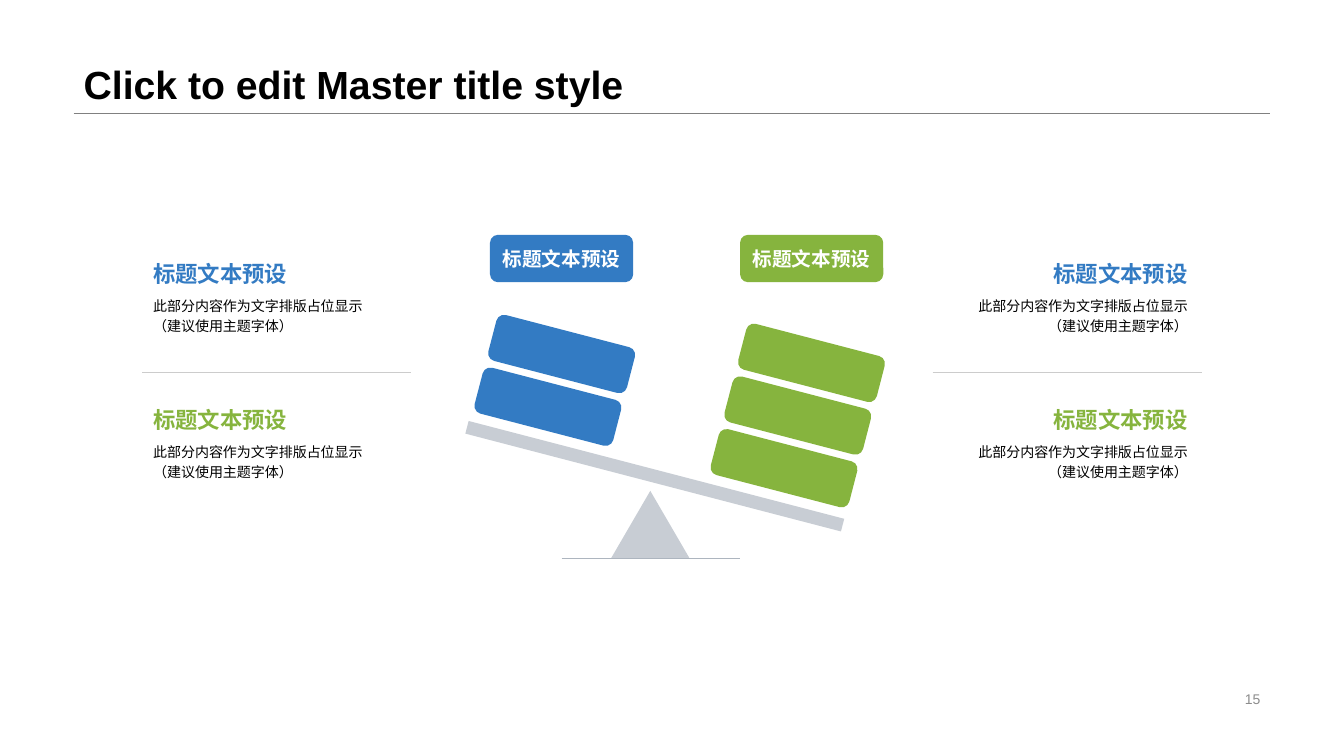
from dataclasses import dataclass
from math import cos, radians, sin

from pptx import Presentation
from pptx.dml.color import RGBColor
from pptx.enum.shapes import MSO_CONNECTOR, MSO_SHAPE
from pptx.enum.text import MSO_ANCHOR, MSO_AUTO_SIZE, PP_ALIGN
from pptx.oxml.ns import qn
from pptx.util import Inches, Pt


@dataclass(frozen=True)
class Theme:
    font: str = "Arial"
    blue: str = "337BC3"
    green: str = "86B43E"
    grey: str = "C8CDD4"
    ground: str = "ADB5BF"
    divider: str = "CCCCCC"
    title_rule: str = "808080"
    page: str = "8C8C8C"
    black: str = "000000"
    white: str = "FFFFFF"
    title_size: int = 28
    heading_size: int = 16
    label_size: int = 14
    body_size: int = 10


@dataclass(frozen=True)
class Box:
    left: float
    top: float
    width: float
    height: float

    @property
    def right(self):
        return self.left + self.width

    @property
    def bottom(self):
        return self.top + self.height

    def inches(self):
        return [Inches(v) for v in (self.left, self.top, self.width, self.height)]


THEME = Theme()
HEADING = "标题文本预设"
BODY = ["此部分内容作为文字排版占位显示", "（建议使用主题字体）"]
TILT = 14.6
BLOCK_WIDTH, BLOCK_HEIGHT = 1.42, 0.47


def write(frame, lines, size, color, bold=False, align=PP_ALIGN.LEFT,
          anchor=MSO_ANCHOR.TOP, spacing=1.0, wrap=True):
    """Fill a text frame with one paragraph, its lines parted by line breaks."""
    frame.word_wrap = wrap
    frame.auto_size = MSO_AUTO_SIZE.NONE
    frame.vertical_anchor = anchor
    paragraph = frame.paragraphs[0]
    paragraph.alignment = align
    paragraph.line_spacing = spacing
    for index, line in enumerate(lines):
        if index:
            paragraph.add_line_break()
        run = paragraph.add_run()
        run.text = line
        run.font.name = THEME.font
        run.font.size = Pt(size)
        run.font.bold = bold
        run.font.color.rgb = RGBColor.from_string(color)


def add_text(slide, box, lines, size, color, **style):
    frame = slide.shapes.add_textbox(*box.inches()).text_frame
    frame.margin_left = frame.margin_right = 0
    frame.margin_top = frame.margin_bottom = 0
    write(frame, lines, size, color, **style)


def add_filled(slide, kind, box, color, rotation=0):
    shape = slide.shapes.add_shape(kind, *box.inches())
    shape.shadow.inherit = False
    shape.fill.solid()
    shape.fill.fore_color.rgb = RGBColor.from_string(color)
    shape.line.fill.background()
    shape.rotation = rotation
    return shape


def add_rule(slide, left, right, y, color, weight):
    rule = slide.shapes.add_connector(
        MSO_CONNECTOR.STRAIGHT, Inches(left), Inches(y), Inches(right), Inches(y))
    rule.line.color.rgb = RGBColor.from_string(color)
    rule.line.width = Pt(weight)
    properties = rule._element.spPr
    properties.append(properties.makeelement(qn("a:effectLst"), {}))


def add_header(slide, box):
    add_rule(slide, box.left, box.right, box.bottom, THEME.title_rule, 0.25)
    title = slide.shapes.title
    title.left, title.top, title.width, title.height = box.inches()
    write(title.text_frame, ["Click to edit Master title style"], THEME.title_size,
          THEME.black, bold=True, anchor=MSO_ANCHOR.BOTTOM, spacing=0.9)


def add_page_number(slide, box):
    frame = slide.shapes.add_textbox(*box.inches()).text_frame
    write(frame, ["15"], THEME.body_size, THEME.page,
          align=PP_ALIGN.RIGHT, anchor=MSO_ANCHOR.MIDDLE)


def add_seesaw(slide, box):
    """Draw a tilted beam on a pivot, with a labelled stack of blocks on each arm."""
    beam = Box(box.left, box.top + 2.33, 3.85, 0.13)
    center_x, center_y = beam.left + beam.width / 2, beam.top + beam.height / 2
    along, across = cos(radians(TILT)), sin(radians(TILT))
    add_filled(slide, MSO_SHAPE.RECTANGLE, beam, THEME.grey, TILT)

    stacks = [(THEME.blue, 2, -1.2, 0.29), (THEME.green, 3, 1.22, 2.77)]
    for color, count, arm, label_offset in stacks:
        for level in range(count):
            rise = 0.4 + 0.54 * level
            x = center_x + arm * along + rise * across
            y = center_y + arm * across - rise * along
            block = Box(x - BLOCK_WIDTH / 2, y - BLOCK_HEIGHT / 2,
                        BLOCK_WIDTH, BLOCK_HEIGHT)
            add_filled(slide, MSO_SHAPE.ROUNDED_RECTANGLE, block, color, TILT)
        label = add_filled(
            slide, MSO_SHAPE.ROUNDED_RECTANGLE,
            Box(box.left + label_offset, box.top, BLOCK_WIDTH, BLOCK_HEIGHT), color)
        write(label.text_frame, [HEADING], THEME.label_size, THEME.white, bold=True,
              align=PP_ALIGN.CENTER, anchor=MSO_ANCHOR.MIDDLE, wrap=False)

    pivot = Box(box.left + 1.49, box.bottom - 0.67, 0.78, 0.67)
    add_filled(slide, MSO_SHAPE.ISOSCELES_TRIANGLE, pivot, THEME.grey)
    add_rule(slide, box.left + 1, box.left + 2.77, box.bottom, THEME.ground, 0.5)


def add_notes_column(slide, box, align, divider_left):
    """Place two headed notes in the box, with a divider between them."""
    for index, color in enumerate([THEME.blue, THEME.green]):
        top = box.top + 1.45 * index
        add_text(slide, Box(box.left, top + 0.34, box.width, 0.56), BODY,
                 THEME.body_size, THEME.black, align=align, spacing=1.2)
        add_text(slide, Box(box.left, top, box.width, 0.34), [HEADING],
                 THEME.heading_size, color, bold=True, align=align)
    add_rule(slide, divider_left, divider_left + 2.67, box.top + 1.11,
             THEME.divider, 0.5)


def main():
    deck = Presentation()
    deck.slide_width, deck.slide_height = Inches(13.33), Inches(7.5)
    slide = deck.slides.add_slide(deck.slide_layouts[5])
    add_header(slide, Box(0.73, 0, 11.87, 1.12))
    add_page_number(slide, Box(9.42, 6.82, 3.18, 0.23))
    add_seesaw(slide, Box(4.57, 2.33, 4.19, 3.21))
    add_notes_column(slide, Box(8.92, 2.58, 2.86, 2.34), PP_ALIGN.RIGHT, 9.25)
    add_notes_column(slide, Box(1.52, 2.58, 2.86, 2.34), PP_ALIGN.LEFT, 1.41)
    deck.save("out.pptx")


if __name__ == "__main__":
    main()
